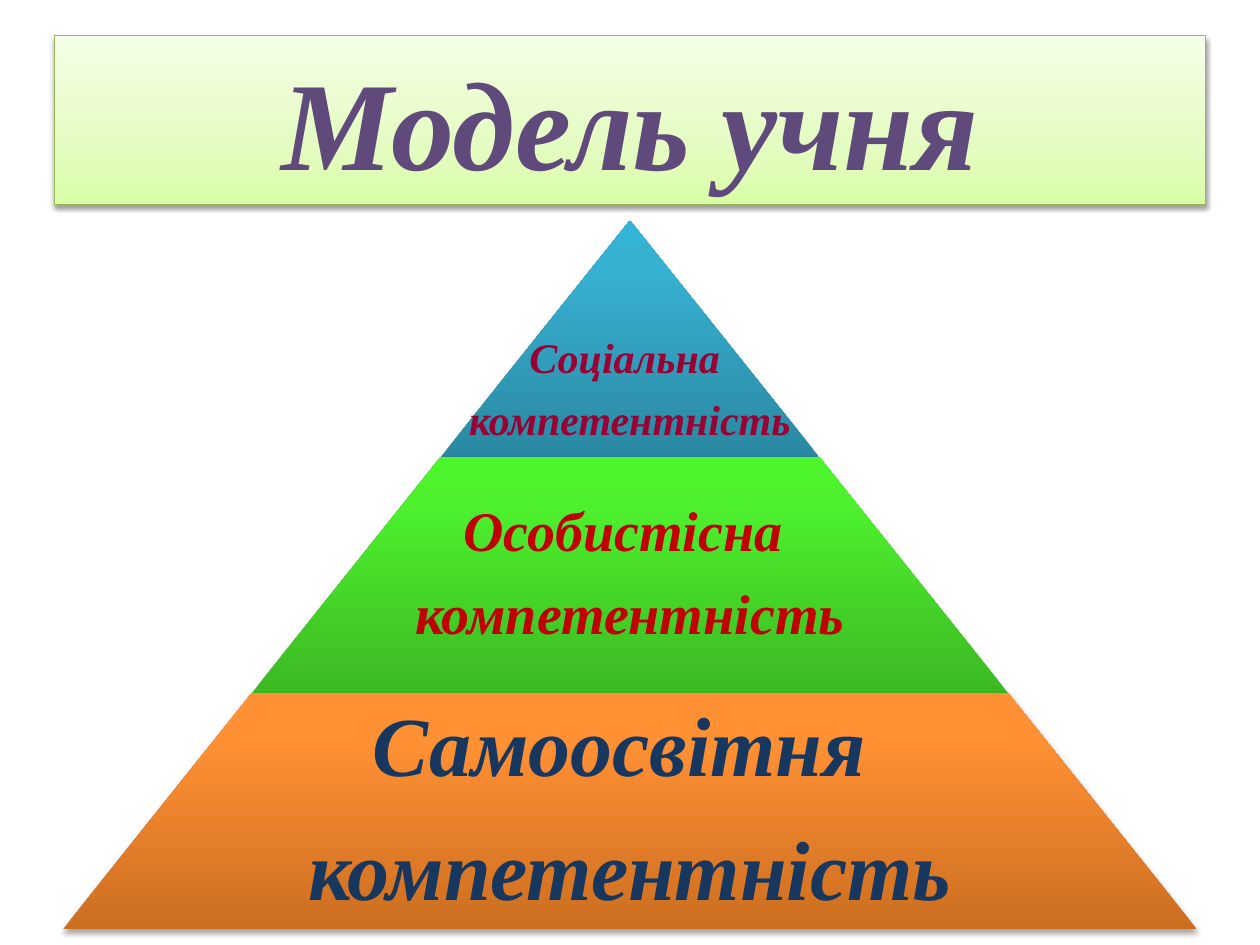
"""Build the pupil model slide: a heading panel above a three-level pyramid."""
from copy import deepcopy

from lxml import etree
from pptx import Presentation
from pptx.dml.color import RGBColor
from pptx.enum import shapes, text
from pptx.oxml.ns import qn
from pptx.util import Pt

PURPLE = RGBColor(0x60, 0x4A, 0x7B)
OLIVE = RGBColor(0x98, 0xB9, 0x55)
CRIMSON = RGBColor(0x99, 0x00, 0x33)
RED = RGBColor(0xC0, 0x00, 0x00)
NAVY = RGBColor(0x17, 0x37, 0x5E)
LIMES = RGBColor(0xDA, 0xFD, 0xA7), RGBColor(0xE4, 0xFC, 0xC2), RGBColor(0xF5, 0xFF, 0xE7)
BLUES = RGBColor(0x2A, 0x88, 0xA2), RGBColor(0x37, 0xB1, 0xD2), RGBColor(0x34, 0xB4, 0xD6)
GREENS = RGBColor(0x3C, 0xB9, 0x23), RGBColor(0x4E, 0xF0, 0x2E), RGBColor(0x4C, 0xF5, 0x2A)
ORANGES = RGBColor(0xCC, 0x6E, 0x20), RGBColor(0xFF, 0x90, 0x34), RGBColor(0xFF, 0x91, 0x36)


def style_surface(shape, colors, middle, distance, opacity):
    """Give a shape a vertical three-stop gradient and a soft shadow below."""
    shape.fill.gradient()
    shape.fill.gradient_angle = 90
    properties = shape._element.spPr
    stop_list = properties.find(".//" + qn("a:gsLst"))
    stop_list.insert(1, deepcopy(stop_list[0]))
    for stop, color, position in zip(shape.fill.gradient_stops, colors, (0, middle, 1)):
        stop.color.rgb = color
        stop.position = position
    shape.shadow.inherit = False
    effects = properties.find(qn("a:effectLst"))
    shadow = etree.SubElement(effects, qn("a:outerShdw"), blurRad=str(Pt(3.1)),
                              dist=str(Pt(distance)), dir="5400000", rotWithShape="0")
    black = etree.SubElement(shadow, qn("a:srgbClr"), val="000000")
    etree.SubElement(black, qn("a:alpha"), val=str(opacity * 1000))


def style_text(paragraph, size, color):
    """Centre a paragraph and set it in bold italic Times New Roman."""
    paragraph.alignment = text.PP_ALIGN.CENTER
    font = {"name": "Times New Roman", "size": Pt(size), "bold": True, "italic": True}
    for name, value in font.items():
        setattr(paragraph.font, name, value)
    paragraph.font.color.rgb = color


presentation = Presentation()
presentation.slide_width, presentation.slide_height = Pt(720), Pt(540)
slide = presentation.slides.add_slide(presentation.slide_layouts[5])

title = slide.shapes.title
for name, value in {"left": 31, "top": 20.2, "width": 658, "height": 96.5}.items():
    setattr(title, name, Pt(value))
geometry = etree.SubElement(title._element.spPr, qn("a:prstGeom"), prst="roundRect")
etree.SubElement(geometry, qn("a:avLst"))
title.line.color.rgb = OLIVE
title.line.width = Pt(0.75)
style_surface(title, LIMES, 0.35, 1.6, 38)
title.text_frame.text = "Модель учня"
title.text_frame.vertical_anchor = text.MSO_ANCHOR.MIDDLE
style_text(title.text_frame.paragraphs[0], 72, PURPLE)

CENTER, PYRAMID_TOP, LEVEL_HEIGHT, LEVEL_STEP = 360, 126, 135, 216
levels = [
    ("Соціальна ", BLUES, CRIMSON, 24, 216, 2, 62),
    ("Особистісна ", GREENS, RED, 32, 281, 3, 3),
    ("Самоосвітня ", ORANGES, NAVY, 48, 421, 5, 5),
]
for index, (adjective, colors, color, size, text_width, inset, top_inset) in enumerate(levels):
    top = PYRAMID_TOP + index * LEVEL_HEIGHT
    width = (index + 1) * LEVEL_STEP
    level = slide.shapes.add_shape(shapes.MSO_SHAPE.TRAPEZOID, Pt(CENTER - width / 2),
                                   Pt(top), Pt(width), Pt(LEVEL_HEIGHT))
    level.adjustments[0] = 0.8
    level.line.fill.background()
    style_surface(level, colors, 0.8, 1.8, 35)

    label = slide.shapes.add_textbox(Pt(CENTER - text_width / 2), Pt(top),
                                     Pt(text_width), Pt(LEVEL_HEIGHT))
    frame = label.text_frame
    frame_format = {
        "word_wrap": True, "vertical_anchor": text.MSO_ANCHOR.MIDDLE,
        "margin_left": Pt(inset), "margin_right": Pt(inset),
        "margin_top": Pt(top_inset), "margin_bottom": Pt(inset),
    }
    for name, value in frame_format.items():
        setattr(frame, name, value)
    frame.text = f"{adjective}\nкомпетентність"
    for paragraph in frame.paragraphs:
        paragraph.line_spacing = 0.9
        style_text(paragraph, size, color)
    frame.paragraphs[0].space_after = Pt(0.4 * size)

presentation.save("out.pptx")
